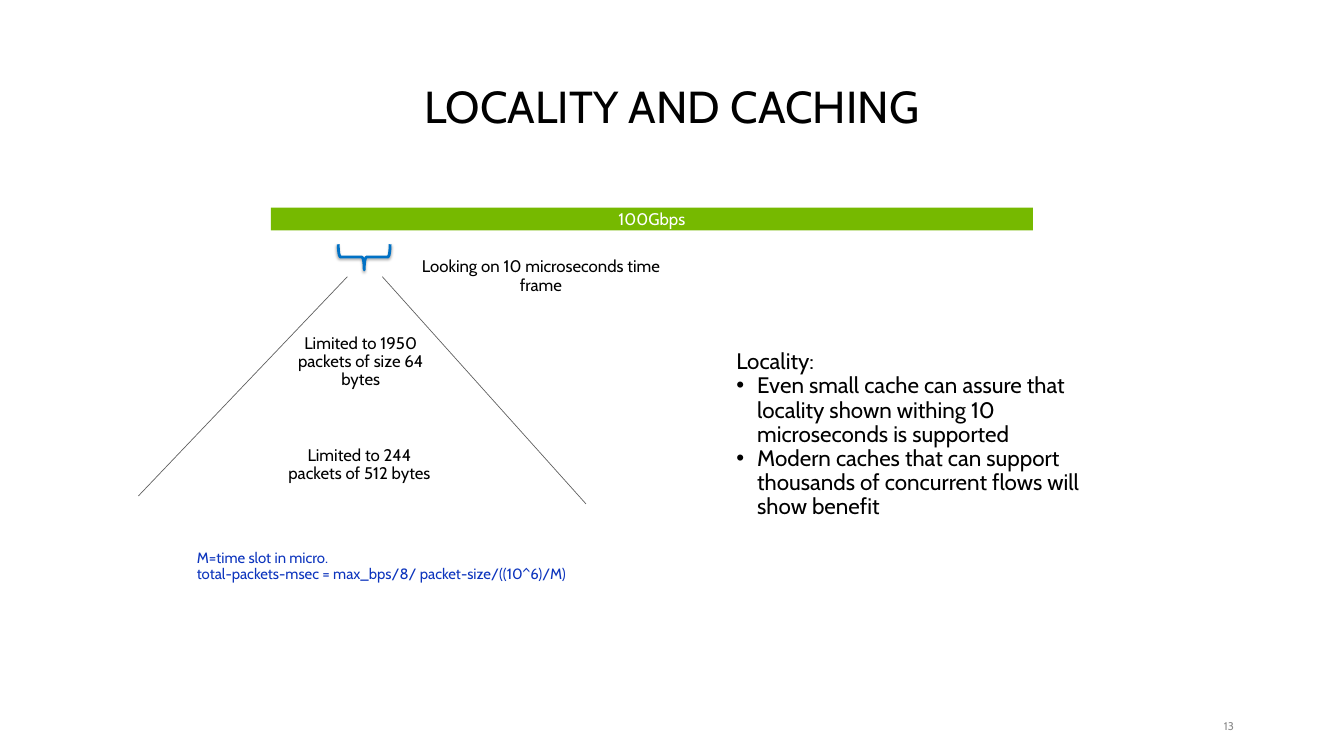
"""Build the slide on locality and caching at 100Gbps."""
from dataclasses import dataclass

from lxml import etree
from pptx import Presentation
from pptx import util as u
from pptx.dml.color import RGBColor
from pptx.enum import shapes, text
from pptx.oxml import parse_xml
from pptx.oxml.ns import nsdecls, qn

FONT = "Cabin"
COLORS = {
    "ink": "000000",
    "paper": "FFFFFF",
    "link": "76B900",
    "brace": "0071C5",
    "zoom": "5E5E5E",
    "formula": "0C34BD",
    "number": "8C8C8C",
}
LEFT, CENTER, RIGHT = text.PP_ALIGN.LEFT, text.PP_ALIGN.CENTER, text.PP_ALIGN.RIGHT
MIDDLE, TOP = text.MSO_ANCHOR.MIDDLE, text.MSO_ANCHOR.TOP
BULLET_INDENT = u.Cm(0.79)


@dataclass(frozen=True)
class Box:
    left: float
    top: float
    width: float
    height: float

    def emu(self) -> list[int]:
        return [u.Cm(v) for v in (self.left, self.top, self.width, self.height)]


@dataclass(frozen=True)
class Line:
    words: str
    bullet: bool = False


@dataclass(frozen=True)
class Note:
    box: Box
    lines: tuple[Line, ...]
    size: int = 18
    color: str = "ink"
    align: text.PP_ALIGN = CENTER
    anchor: text.MSO_ANCHOR = MIDDLE
    spacing: float = 0.9
    inset: bool = True


@dataclass(frozen=True)
class ZoomEdge:
    start: tuple[float, float]
    end: tuple[float, float]


NOTES = (
    Note(Box(15.49, 9.63, 9.91, 1.65), (Line("Looking on 10 microseconds time frame"),)),
    Note(Box(10.64, 12.52, 5.99, 2.34), (Line("Limited to 1950 packets of size 64 bytes"),)),
    Note(Box(10.59, 16.41, 5.99, 2.34), (Line("Limited to 244 packets of 512 bytes"),)),
    Note(
        Box(27.58, 13.08, 14.38, 6.73),
        (
            Line("Locality:"),
            Line("Even small cache can assure that locality shown withing 10 "
                 "microseconds is supported", bullet=True),
            Line("Modern caches that can support thousands of concurrent flows "
                 "will show benefit", bullet=True),
        ),
        size=24,
        align=LEFT,
    ),
    Note(
        Box(7.19, 20.7, 21.39, 2.11),
        (
            Line("M=time slot in micro."),
            Line("total-packets-msec = max_bps/8/ packet-size/((10^6)/M)"),
        ),
        size=16, color="formula", align=LEFT, anchor=TOP,
    ),
    Note(Box(45.14, 27.2, 1.5, 0.51), (Line("13"),), size=12, color="number",
         align=RIGHT, spacing=1.0, inset=False),
)
ZOOM_EDGES = (
    ZoomEdge((13.13, 10.46), (5.23, 18.75)),
    ZoomEdge((14.45, 10.46), (22.15, 19.05)),
)


def rgb(name: str) -> RGBColor:
    return RGBColor.from_string(COLORS[name])


def add_bullet(paragraph) -> None:
    properties = paragraph._p.get_or_add_pPr()
    properties.set("marL", str(BULLET_INDENT))
    properties.set("indent", str(-BULLET_INDENT))
    etree.SubElement(properties, qn("a:buFont"), typeface="Arial")
    etree.SubElement(properties, qn("a:buChar"), char="•")


def write(frame, lines: tuple[Line, ...], size: int, color: str,
          align: text.PP_ALIGN = CENTER, spacing: float = 0.9) -> None:
    frame.word_wrap = True
    for index, line in enumerate(lines):
        paragraph = frame.add_paragraph() if index else frame.paragraphs[0]
        paragraph.alignment = align
        paragraph.line_spacing = spacing
        if line.bullet:
            add_bullet(paragraph)
        run = paragraph.add_run()
        run.text = line.words
        run.font.name = FONT
        run.font.size = u.Pt(size)
        run.font.color.rgb = rgb(color)


def add_title(slide, box: Box, words: str) -> None:
    title = slide.shapes.title
    title.left, title.top, title.width, title.height = box.emu()
    title.text_frame.vertical_anchor = text.MSO_ANCHOR.BOTTOM
    title.text_frame.auto_size = text.MSO_AUTO_SIZE.NONE
    write(title.text_frame, (Line(words),), 48, "ink")


def add_link_bar(slide, box: Box, words: str) -> None:
    bar = slide.shapes.add_shape(shapes.MSO_SHAPE.RECTANGLE, *box.emu())
    bar.shadow.inherit = False
    bar.fill.solid()
    bar.fill.fore_color.rgb = rgb("link")
    bar.line.fill.background()
    bar.text_frame.vertical_anchor = MIDDLE
    write(bar.text_frame, (Line(words),), 18, "paper", spacing=1.0)


def add_time_brace(slide, box: Box) -> None:
    brace = slide.shapes.add_shape(shapes.MSO_SHAPE.RIGHT_BRACE, *box.emu())
    brace.rotation = 90
    brace.fill.background()
    brace.line.color.rgb = rgb("brace")
    brace.line.width = u.Pt(3)
    brace._element.spPr.append(parse_xml(
        f'<a:effectLst {nsdecls("a")}><a:outerShdw blurRad="{u.Pt(3.1)}" '
        f'dist="{u.Pt(1.8)}" dir="5400000" rotWithShape="0">'
        f'<a:srgbClr val="{COLORS["ink"]}"><a:alpha val="35000"/></a:srgbClr>'
        "</a:outerShdw></a:effectLst>"))


def add_zoom_edge(slide, edge: ZoomEdge) -> None:
    ends = [u.Cm(v) for v in (*edge.start, *edge.end)]
    connector = slide.shapes.add_connector(shapes.MSO_CONNECTOR.STRAIGHT, *ends)
    connector.line.color.rgb = rgb("zoom")
    connector.line.width = u.Pt(0.75)
    etree.SubElement(connector._element.spPr, qn("a:effectLst"))


def add_note(slide, note: Note) -> None:
    frame = slide.shapes.add_textbox(*note.box.emu()).text_frame
    frame.vertical_anchor = note.anchor
    if not note.inset:
        frame.margin_left = frame.margin_right = 0
        frame.margin_top = frame.margin_bottom = 0
    write(frame, note.lines, note.size, note.color, note.align, note.spacing)


def main() -> None:
    deck = Presentation()
    deck.slide_width, deck.slide_height = u.Cm(50.8), u.Cm(28.58)
    slide = deck.slides.add_slide(deck.slide_layouts[5])
    add_title(slide, Box(2.31, 2.41, 46.18, 2.74), "LOCALITY AND CACHING")
    add_link_bar(slide, Box(10.24, 7.85, 28.8, 0.86), "100Gbps")
    add_time_brace(slide, Box(13.28, 8.74, 0.97, 1.96))
    for edge in ZOOM_EDGES:
        add_zoom_edge(slide, edge)
    for note in NOTES:
        add_note(slide, note)
    deck.save("out.pptx")


if __name__ == "__main__":
    main()
